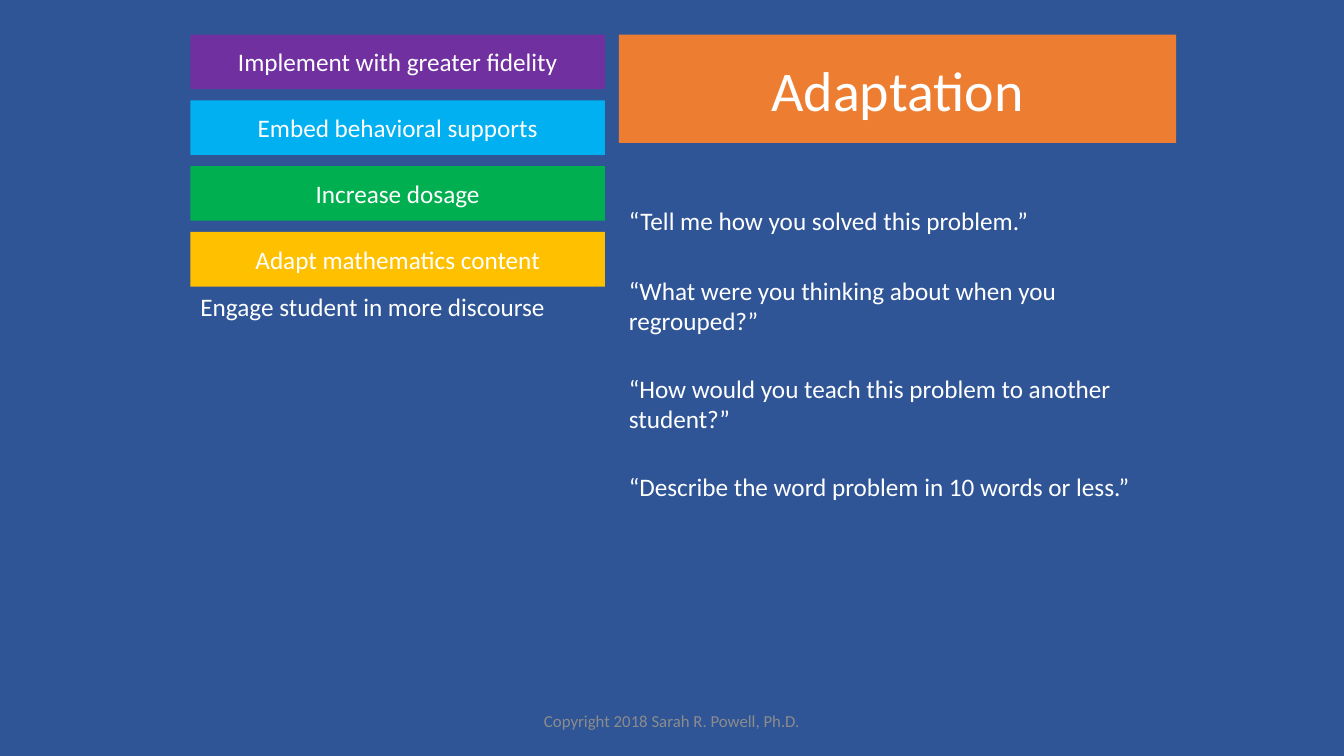
from pptx import Presentation
from pptx.dml.color import RGBColor
from pptx.enum.shapes import MSO_SHAPE as SHAPE
from pptx.enum.text import MSO_ANCHOR as ANCHOR, MSO_AUTO_SIZE as AUTO, PP_ALIGN as ALIGN
from pptx.util import Pt

LEFT, RIGHT, TOP = 136.1, 442.1, 24.7
STEP_W, STEP_H, STEP_PITCH = 296, 39, 47
QUOTE_W, LINE_H, TWO_LINES_H = 375, 29, 51

STEPS = [
    ("Implement with greater fidelity", "7030A0"),
    ("Embed behavioral supports", "00B0F0"),
    ("Increase dosage", "00B050"),
    ("Adapt mathematics content", "FFC000"),
]
QUOTES = [
    ("“Tell me how you solved this problem.”", 143.3, LINE_H),
    ("“What were you thinking about when you regrouped?”", 193, TWO_LINES_H),
    ("“How would you teach this problem to another student?”", 263, TWO_LINES_H),
    ("“Describe the word problem in 10 words or less.”", 333.3, LINE_H),
]


def rgb(color):
    return RGBColor.from_string(color)


def write(tf, text, size=18, color="FFFFFF", font="Calibri", align=ALIGN.LEFT, anchor=ANCHOR.TOP):
    tf.word_wrap = True
    tf.vertical_anchor = anchor
    p = tf.paragraphs[0]
    p.alignment = align
    r = p.add_run()
    r.text = text
    r.font.name = font
    r.font.size = Pt(size)
    r.font.color.rgb = rgb(color)


class Deck:
    def __init__(self, width, height, background):
        self.prs = Presentation()
        self.prs.slide_width, self.prs.slide_height = Pt(width), Pt(height)
        self.s = self.prs.slides.add_slide(self.prs.slide_layouts[6])
        fill = self.s.background.fill
        fill.solid()
        fill.fore_color.rgb = rgb(background)

    def block(self, text, x, y, w, h, fill, **style):
        sp = self.s.shapes.add_shape(SHAPE.RECTANGLE, Pt(x), Pt(y), Pt(w), Pt(h))
        sp.shadow.inherit = False
        sp.fill.solid()
        sp.fill.fore_color.rgb = rgb(fill)
        sp.line.fill.background()
        write(sp.text_frame, text, align=ALIGN.CENTER, anchor=ANCHOR.MIDDLE, **style)

    def label(self, text, x, y, w, h, grow=True, **style):
        tf = self.s.shapes.add_textbox(Pt(x), Pt(y), Pt(w), Pt(h)).text_frame
        write(tf, text, **style)
        tf.auto_size = AUTO.SHAPE_TO_FIT_TEXT if grow else AUTO.NONE


def main():
    deck = Deck(960, 540, "2F5597")
    deck.block("Adaptation", RIGHT, TOP, 398, 77.5, "ED7D31", size=40)
    for i, (text, fill) in enumerate(STEPS):
        deck.block(text, LEFT, TOP + i * STEP_PITCH, STEP_W, STEP_H, fill)
    deck.label("Engage student in more discourse", LEFT, 204.7, STEP_W, LINE_H)
    for text, y, h in QUOTES:
        deck.label(text, RIGHT, y, QUOTE_W, h)
    deck.label("Copyright 2018 Sarah R. Powell, Ph.D.", 318, 500.5, 324, 28.75, grow=False,
               size=12, color="8C8C8C", align=ALIGN.CENTER, anchor=ANCHOR.MIDDLE)
    deck.prs.save("out.pptx")


if __name__ == "__main__":
    main()
